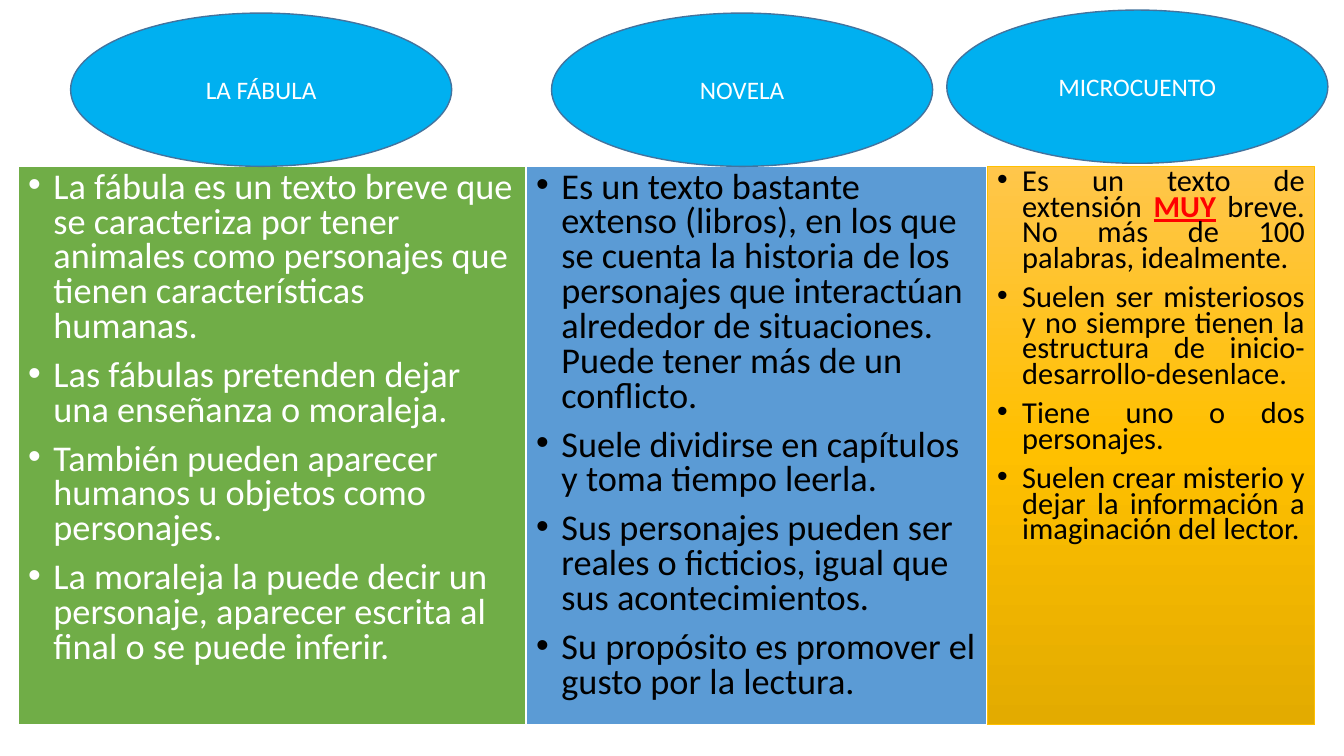
from copy import deepcopy
from lxml import etree
from pptx import Presentation
from pptx.dml.color import RGBColor
from pptx.enum.shapes import MSO_SHAPE
from pptx.enum.text import MSO_ANCHOR, MSO_AUTO_SIZE, PP_ALIGN
from pptx.oxml.ns import qn
from pptx.util import Inches, Pt

RECT, OVAL = MSO_SHAPE.RECTANGLE, MSO_SHAPE.OVAL
LEFT, CENTER, JUSTIFY = PP_ALIGN.LEFT, PP_ALIGN.CENTER, PP_ALIGN.JUSTIFY
TOP, MIDDLE = MSO_ANCHOR.TOP, MSO_ANCHOR.MIDDLE
NO_FIT = MSO_AUTO_SIZE.NONE

WHITE = RGBColor(0xFF, 0xFF, 0xFF)
BLACK = RGBColor(0x00, 0x00, 0x00)
RED = RGBColor(0xFF, 0x00, 0x00)
GREEN = RGBColor(0x70, 0xAD, 0x47)
BLUE = RGBColor(0x5B, 0x9B, 0xD5)
GOLD = RGBColor(0xFF, 0xC0, 0x00)
GOLD_LIGHT = RGBColor(0xFF, 0xC6, 0x4B)
GOLD_DARK = RGBColor(0xE3, 0xAB, 0x00)
SKY = RGBColor(0x00, 0xB0, 0xF0)
SKY_EDGE = RGBColor(0x43, 0x73, 0x9E)

FONT = "Calibri"
EMPHASIS = "MUY"
COLUMN_TOP, COLUMN_H = 1.65, 5.54
OVAL_W, OVAL_H = 3.78, 1.52

FABLE = [
    "La fábula es un texto breve que se caracteriza por tener animales como "
    "personajes que tienen características humanas.",
    "Las fábulas pretenden dejar una enseñanza o moraleja.",
    "También pueden aparecer humanos u objetos como personajes.",
    "La moraleja la puede decir un personaje, aparecer escrita al final o se puede inferir.",
]
NOVEL = [
    "Es un texto bastante extenso (libros), en los que se cuenta la historia de los "
    "personajes que interactúan alrededor de situaciones. Puede tener más de un conflicto.",
    "Suele dividirse en capítulos y toma tiempo leerla.",
    "Sus personajes pueden ser reales o ficticios, igual que sus acontecimientos.",
    "Su propósito es promover el gusto por la lectura.",
]
MICRO = [
    "Es un texto de extensión MUY breve. No más de 100 palabras, idealmente.",
    "Suelen ser misteriosos y no siempre tienen la estructura de "
    "inicio-desarrollo-desenlace.",
    "Tiene uno o dos personajes.",
    "Suelen crear misterio y dejar la información a imaginación del lector.",
]


def paint(sp, colors, edge, width):
    """Fill with one colour, or with a top-to-bottom gradient of three."""
    if len(colors) == 1:
        sp.fill.solid()
        sp.fill.fore_color.rgb = colors[0]
    else:
        sp.fill.gradient()
        sp.fill.gradient_angle = 270
        first = next(sp._element.spPr.iter(qn("a:gs")))
        first.addnext(deepcopy(first))
        for i, (stop, color) in enumerate(zip(sp.fill.gradient_stops, colors)):
            stop.position = i / (len(colors) - 1)
            stop.color.rgb = color
    sp.line.color.rgb = edge
    sp.line.width = Pt(width)


def style_run(r, size, color):
    r.font.name, r.font.size, r.font.color.rgb = FONT, Pt(size), color


def add_bullet(p):
    pPr = p._p.get_or_add_pPr()
    pPr.set("marL", str(Inches(0.25)))
    pPr.set("indent", str(-Inches(0.25)))
    etree.SubElement(pPr, qn("a:buFont")).set("typeface", "Arial")
    etree.SubElement(pPr, qn("a:buChar")).set("char", "•")


def fill_column(sp, left, width, items, size, color, spacing, align):
    """Place a column and write its bulleted list."""
    sp.left, sp.top = Inches(left), Inches(COLUMN_TOP)
    sp.width, sp.height = Inches(width), Inches(COLUMN_H)
    tf = sp.text_frame
    tf.word_wrap, tf.auto_size, tf.vertical_anchor = True, NO_FIT, TOP
    for i, item in enumerate(items):
        p = tf.add_paragraph() if i else tf.paragraphs[0]
        p.alignment, p.line_spacing = align, spacing
        p.space_before, p.space_after = Pt(10 if i else 0), Pt(0)
        add_bullet(p)
        for part in item.partition(EMPHASIS):
            if part:
                r = p.add_run()
                r.text = part
                style_run(r, size, color)
                if part == EMPHASIS:
                    r.font.bold = r.font.underline = True
                    r.font.color.rgb = RED


def add_heading(s, left, top, text):
    sp = s.shapes.add_shape(OVAL, Inches(left), Inches(top), Inches(OVAL_W), Inches(OVAL_H))
    sp.shadow.inherit = False
    paint(sp, [SKY], SKY_EDGE, 1)
    tf = sp.text_frame
    tf.text = text
    tf.word_wrap, tf.vertical_anchor = True, MIDDLE
    p = tf.paragraphs[0]
    p.alignment = CENTER
    style_run(p.runs[0], 18, WHITE)


def add_rect(s):
    sp = s.shapes.add_shape(RECT, 0, 0, Inches(1), Inches(1))
    sp.shadow.inherit = False
    return sp


def build_comparison(s):
    # Columns: the fable in the body placeholder, the others beside it
    title = s.shapes.title._element
    title.getparent().remove(title)
    fable, novel, micro = s.placeholders[1], add_rect(s), add_rect(s)
    paint(fable, [GREEN], WHITE, 1.5)
    paint(novel, [BLUE], WHITE, 1.5)
    paint(micro, [GOLD_LIGHT, GOLD, GOLD_DARK], GOLD, 0.5)
    fill_column(fable, 0.18, 5.04, FABLE, 25.9, WHITE, 0.8, LEFT)
    fill_column(novel, 5.22, 4.57, NOVEL, 25.9, BLACK, 0.8, LEFT)
    fill_column(micro, 9.79, 3.25, MICRO, 21.7, BLACK, 0.7, JUSTIFY)

    # Headings above the columns
    add_heading(s, 0.7, 0.13, "LA FÁBULA")
    add_heading(s, 5.47, 0.13, "NOVELA")
    add_heading(s, 9.39, 0.1, "MICROCUENTO")


def main():
    prs = Presentation()
    prs.slide_width, prs.slide_height = Inches(13.33), Inches(7.5)
    build_comparison(prs.slides.add_slide(prs.slide_layouts[1]))
    prs.save("out.pptx")


if __name__ == "__main__":
    main()
